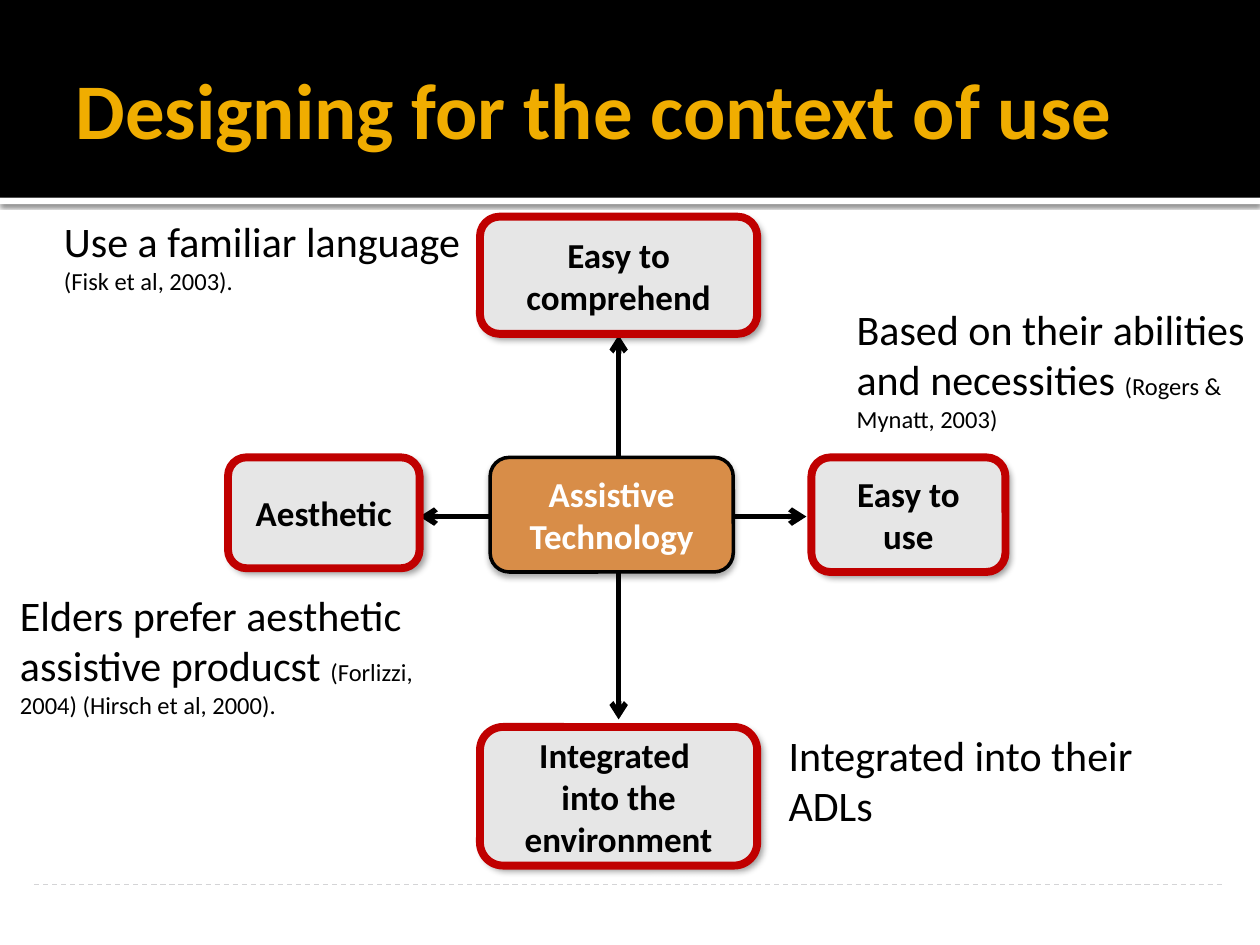
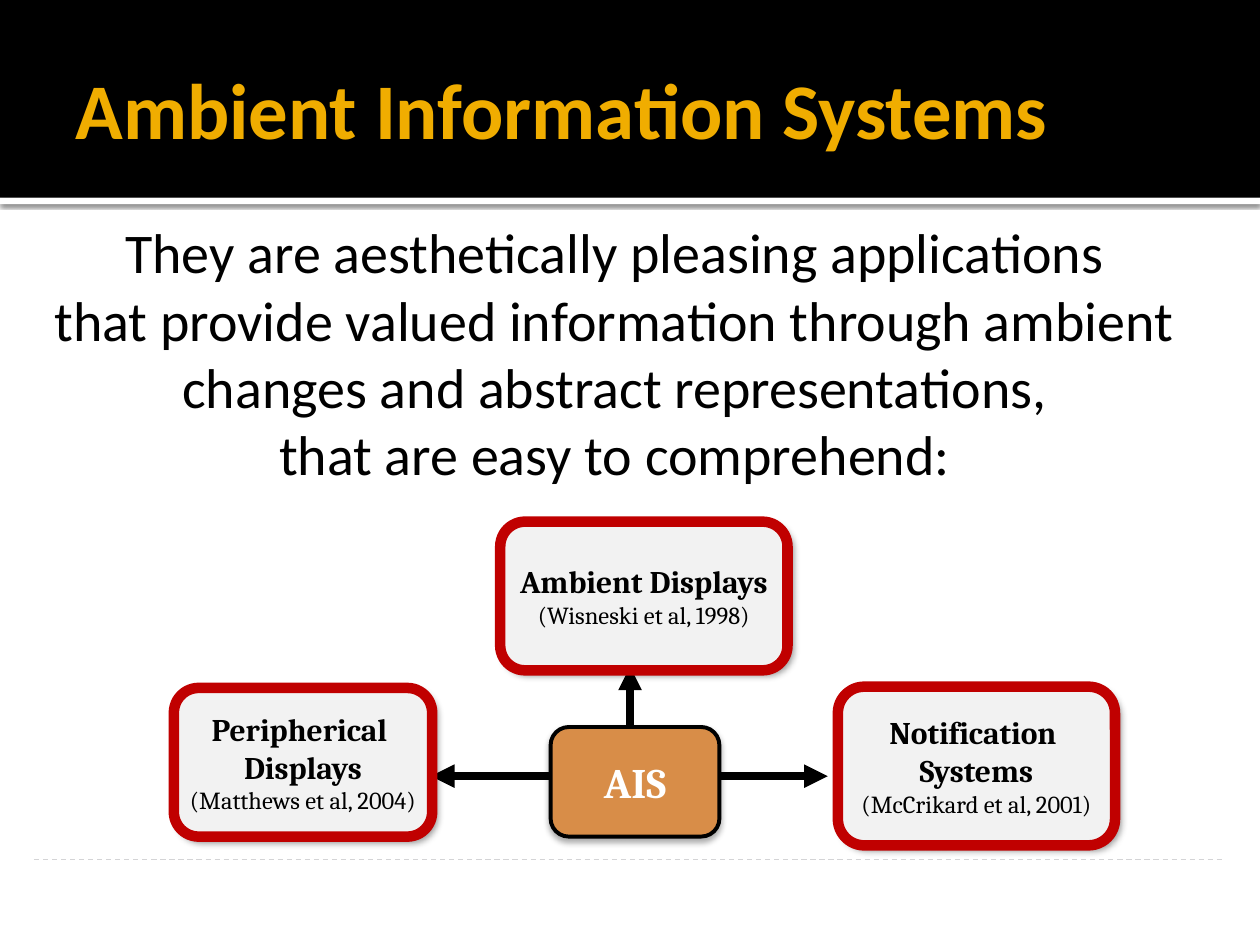
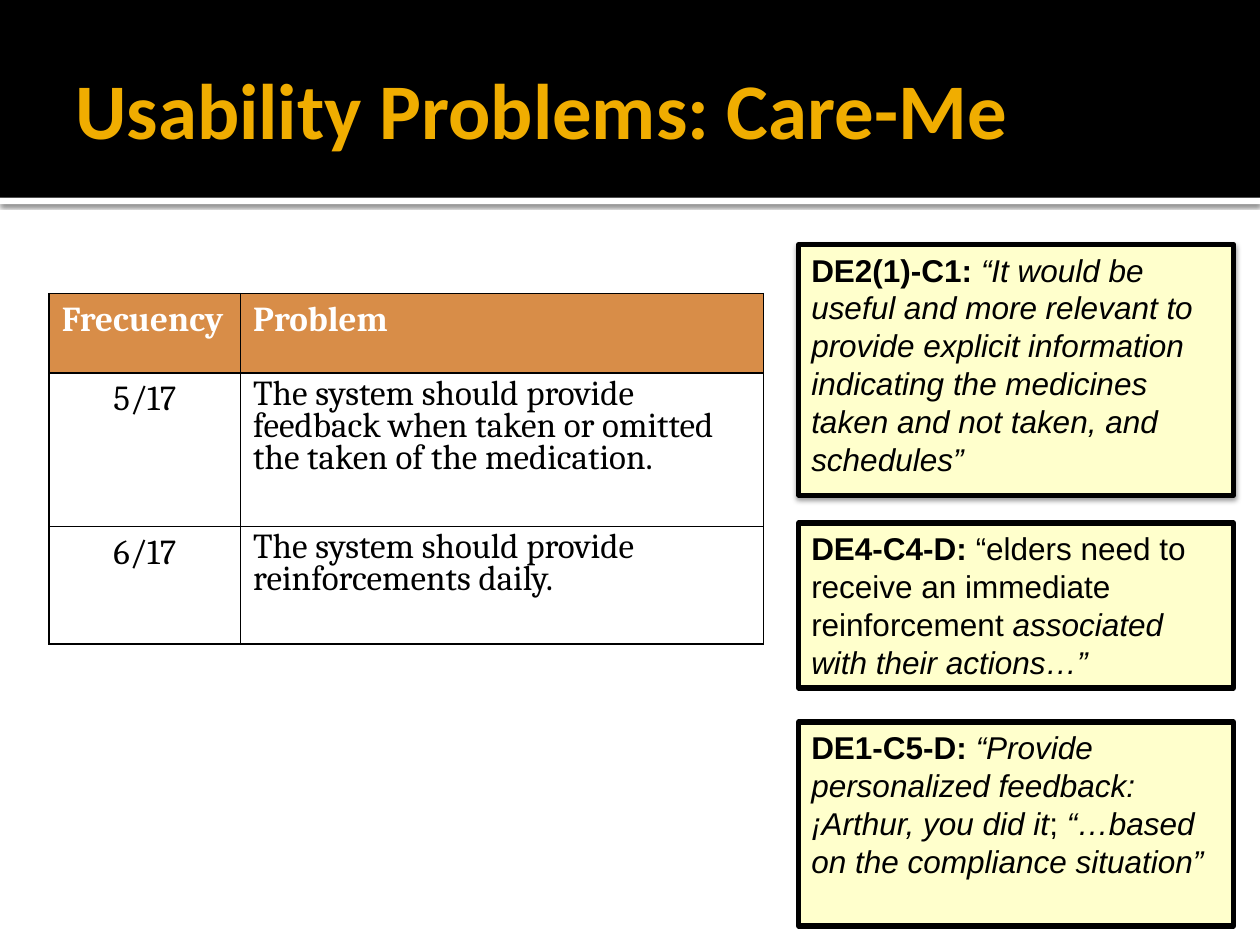
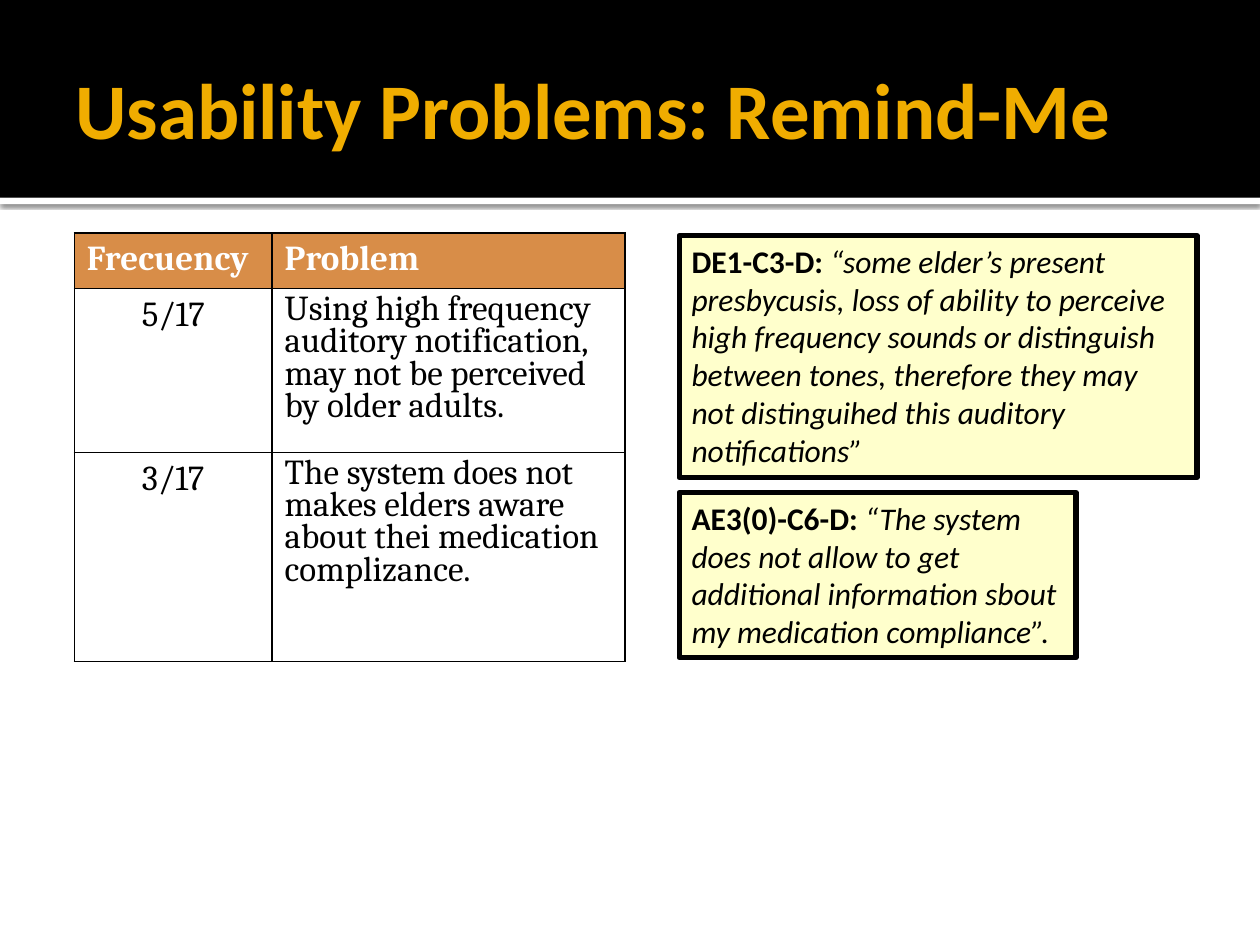
from lxml import etree
from pptx import Presentation
from pptx import util as u
from pptx.dml.color import RGBColor
from pptx.enum import dml, shapes, text
from pptx.oxml import ns


class Theme:
    black, white, gold = "000000", "FFFFFF", "F0AD00"
    red, orange, cream, rule = "C00000", "D88D48", "FFFFCC", "D4D4D6"
    sans, serif, plain = "Calibri", "Cambria", "Arial"
    title, lead, body, label, note, cite = 45, 32, 24, 20, 18, 14
    drop = (40, 4, 3, 45)
    soft = (32, 3.5, 2.2, 90)
    band = (60, 2.5, 0.8, 90)
    lift = (38, 3.1, 1.6, 90)


CITE = dict(size=Theme.cite, bold=False)
BOLD = dict(bold=True)
ITAL = dict(italic=True)
ROMAN = {}

USE = dict(
    title="Designing for the context of use",
    rule=7.02,
    arrows=[
        ((4.91, 4.26), (4.91, 5.71)),
        ((5.54, 4.1), (6.4, 4.1)),
        ((4.37, 4.1), (3.33, 4.1)),
        ((4.91, 3.83), (4.91, 2.66)),
    ],
    arrow=(3, "arrow"),
    texts=[
        ((0.06, 4.63, 3.39, 1.14), [("Elders prefer aesthetic assistive producst ", ROMAN),
                                    ("(Forlizzi, 2004) (Hirsch et al, 2000).", CITE)]),
        ((6.7, 2.36, 3.39, 1.5), [("Based on their abilities and necessities ", ROMAN),
                                  ("(Rogers & Mynatt, 2003)", CITE)]),
        ((0.41, 1.66, 3.47, 1.09), [("Use a familiar language ", ROMAN),
                                    ("(Fisk et al, 2003).", CITE)]),
        ((6.16, 5.74, 3.15, 1.26), [("Integrated into their ADLs", ROMAN)]),
    ],
    cards=[
        ((1.81, 3.63, 1.52, 0.88), ["Aesthetic"]),
        ((6.44, 3.63, 1.54, 0.91), ["Easy to use"]),
        ((3.81, 1.72, 2.2, 0.93), ["Easy to comprehend"]),
        ((3.81, 5.77, 2.2, 1.1), ["Integrated ", "into the environment"]),
    ],
    hub=((3.89, 3.63, 1.93, 0.91), "Assistive Technology", Theme.label),
    look=dict(fill="E6E6E6", edge=2, frame=4.5, font=Theme.sans, size=Theme.label, wrap=True),
)

AMBIENT = dict(
    title="Ambient Information Systems",
    rule=6.82,
    arrows=[
        ((4.53, 6.16), (3.42, 6.16)),
        ((5.23, 6.16), (6.57, 6.16)),
        ((5, 6.24), (5, 5.29)),
    ],
    arrow=(4.5, "triangle"),
    texts=[],
    cards=[
        ((3.97, 4.14, 2.28, 1.18), ["Ambient Displays", ("(Wisneski et al, 1998)", CITE)]),
        ((6.65, 5.45, 2.2, 1.26), ["Notification ", "Systems", ("(McCrikard et al, 2001)", CITE)]),
        ((1.38, 5.46, 2.05, 1.18), ["Peripherical ", "Displays", ("(Matthews et al, 2004)", CITE)]),
    ],
    hub=((4.37, 5.77, 1.34, 0.87), "AIS", Theme.body),
    look=dict(fill="F2F2F2", edge=2.25, frame=6, font=Theme.serif, size=Theme.note, wrap=False),
)

LEAD = ((0.28, 1.68, 9.3, 2.26), [
    "They are aesthetically pleasing applications ",
    "that provide valued information through ambient ",
    "changes and abstract representations, ",
    "that are easy to comprehend: ",
])

HEAD = ("Frecuency", "Problem")

CARE = dict(
    title="Usability Problems: Care-Me",
    at=(0.39, 2.33), cols=(1.52, 4.15), rows=(0.63, 1.22, 0.93),
    cells=[
        ("5/17", "The system should provide feedback when taken or omitted the taken of the medication."),
        ("6/17", "The system should provide reinforcements daily."),
    ],
    font=Theme.plain,
    notes=[
        ((6.34, 1.94, 3.45, 1.99), Theme.lift, [
            ("DE2(1)-C1: ", BOLD),
            ("“It would be useful and more relevant to provide explicit information "
             "indicating the medicines taken and not taken, and schedules”", ITAL)]),
        ((6.34, 4.15, 3.45, 1.31), None, [
            ("DE4-C4-D: ", BOLD),
            ("“elders need to receive an immediate reinforcement", ROMAN),
            (" associated with their actions…”", ITAL)]),
        ((6.34, 5.73, 3.45, 1.62), None, [
            ("DE1-C5-D: ", BOLD),
            ("“Provide personalized feedback: ¡Arthur, you did it", ITAL),
            ("; ", ROMAN),
            ("“…based on the compliance situation”", ITAL)]),
    ],
)

REMIND = dict(
    title="Usability Problems: Remind-Me",
    at=(0.59, 1.85), cols=(1.57, 2.8), rows=(0.44, 1.3, 1.66),
    cells=[
        ("5/17", "Using high frequency auditory notification, may not be perceived by older adults."),
        ("3/17", "The system does not makes elders aware about thei medication complizance."),
    ],
    font=Theme.sans,
    notes=[
        ((5.39, 1.87, 4.11, 1.92), None, [
            ("DE1-C3-D: ", BOLD),
            ("“some elder’s present presbycusis, loss of ability to perceive high frequency "
             "sounds or distinguish between tones, therefore they may not distinguihed "
             "this auditory notifications”", ITAL)]),
        ((5.39, 3.91, 3.15, 1.31), None, [
            ("AE3(0)-C6-D: ", BOLD),
            ("“The system does not allow to get additional information sbout "
             "my medication compliance”.", ITAL)]),
    ],
)


def inch(box):
    return [u.Inches(n) for n in box]


def sub(node, tag, **attrs):
    return etree.SubElement(node, ns.qn(tag), {k: str(v) for k, v in attrs.items()})


def style(font, size=None, name=None, color=None, bold=None, italic=None):
    if size:
        font.size = u.Pt(size)
    if name:
        font.name = name
    if color:
        font.color.rgb = RGBColor.from_string(color)
    if bold is not None:
        font.bold = bold
    if italic is not None:
        font.italic = italic


def write(frame, paras, align=text.PP_ALIGN.LEFT, **base):
    for i, runs in enumerate(paras):
        para = frame.add_paragraph() if i else frame.paragraphs[0]
        para.alignment = align
        style(para.font, **base)
        if isinstance(runs, str):
            runs = [(runs, ROMAN)]
        elif isinstance(runs, tuple):
            runs = [runs]
        for words, extra in runs:
            run = para.add_run()
            run.text = words
            style(run.font, **extra)


def stroke(line, color, width):
    line.color.rgb = RGBColor.from_string(color)
    line.width = u.Pt(width)


def shade(shape, look):
    shape.shadow.inherit = False
    if look:
        alpha, blur, dist, angle = look
        fx = shape.element.spPr.find(ns.qn("a:effectLst"))
        cast = sub(fx, "a:outerShdw", blurRad=u.Pt(blur), dist=u.Pt(dist),
                   dir=angle * 60000, algn="ctr", rotWithShape=0)
        tint = sub(cast, "a:srgbClr", val=Theme.black)
        sub(tint, "a:alpha", val=alpha * 1000)


def block(slide, kind, box, fill=None, line=None, shadow=None):
    shape = slide.shapes.add_shape(kind, *inch(box))
    shade(shape, shadow)
    if fill:
        shape.fill.solid()
        shape.fill.fore_color.rgb = RGBColor.from_string(fill)
    else:
        shape.fill.background()
    if line:
        stroke(shape.line, *line)
    else:
        shape.line.fill.background()
    return shape


def rect(slide, box, **look):
    return block(slide, shapes.MSO_SHAPE.RECTANGLE, box, **look)


def round_box(slide, box, **look):
    return block(slide, shapes.MSO_SHAPE.ROUNDED_RECTANGLE, box, **look)


def link(slide, start, end, color, width, tip=None):
    wire = slide.shapes.add_connector(shapes.MSO_CONNECTOR.STRAIGHT, *inch(start + end))
    stroke(wire.line, color, width)
    sub(wire.element.spPr, "a:effectLst")
    if tip:
        sub(wire.line._get_or_add_ln(), "a:tailEnd", type=tip)
    return wire


def text_box(slide, box, paras, wrap=True, **base):
    frame = slide.shapes.add_textbox(*inch(box)).text_frame
    frame.word_wrap = wrap
    write(frame, paras, name=Theme.sans, color=Theme.black, **base)


def label(shape, paras, wrap, **base):
    frame = shape.text_frame
    frame.word_wrap = wrap
    frame.vertical_anchor = text.MSO_ANCHOR.MIDDLE
    write(frame, paras, text.PP_ALIGN.CENTER, bold=True, **base)


def add_bands(slide):
    tree = slide.slide_layout.shapes.element
    bands = [
        rect(slide, (0, 1.57, 10, 0.05), fill=Theme.white, shadow=Theme.band),
        rect(slide, (0, 0, 10, 1.57), fill=Theme.black),
    ]
    for i, band in enumerate(bands):
        tree.insert(2 + i, band.element)


def add_slide(deck, title):
    slide = deck.slides.add_slide(deck.slide_layouts[5])
    if len(deck.slides) == 1:
        add_bands(slide)
    head = slide.shapes.title
    head.left, head.top, head.width, head.height = inch((0.5, 0.17, 9, 1.37))
    frame = head.text_frame
    frame.margin_right = u.Inches(0.05)
    frame.vertical_anchor = text.MSO_ANCHOR.MIDDLE
    write(frame, [title], size=Theme.title, name=Theme.sans, color=Theme.gold, bold=True)
    return slide


def draw_map(deck, plan):
    slide = add_slide(deck, plan["title"])
    look = plan["look"]
    for start, end in plan["arrows"]:
        link(slide, start, end, Theme.black, *plan["arrow"])
    y = plan["rule"]
    wire = link(slide, (0.27, y), (9.72, y), Theme.rule, 0.75)
    wire.line.dash_style = dml.MSO_LINE.DASH
    for box, runs in plan["texts"]:
        text_box(slide, box, [runs], size=Theme.body)
    edge = (Theme.black, look["edge"])
    for box, paras in plan["cards"]:
        card = round_box(slide, box, fill=look["fill"], line=edge, shadow=Theme.drop)
        label(card, paras, look["wrap"], size=look["size"], name=look["font"], color=Theme.black)
    for box, _ in plan["cards"]:
        round_box(slide, box, line=(Theme.red, look["frame"]))
    box, words, size = plan["hub"]
    hub = round_box(slide, box, fill=Theme.orange, line=edge, shadow=Theme.soft)
    label(hub, [words], look["wrap"], size=size, name=look["font"], color=Theme.white)
    return slide


def fill_cell(cell, words, head, first):
    props = cell._tc.get_or_add_tcPr()
    for side in "LRTB":
        line = sub(props, f"a:ln{side}", w=u.Pt(1))
        sub(sub(line, "a:solidFill"), "a:srgbClr", val=Theme.black)
    cell.fill.solid()
    cell.fill.fore_color.rgb = RGBColor.from_string(Theme.orange if head else Theme.white)
    align = text.PP_ALIGN.CENTER if first and not head else text.PP_ALIGN.LEFT
    write(cell.text_frame, [words], align, size=Theme.label, name=Theme.serif,
          color=Theme.white if head else Theme.black, bold=head)
    if not head and not first:
        cell.text_frame.paragraphs[0].line_spacing = 0.8


def draw_issues(deck, plan):
    slide = add_slide(deck, plan["title"])
    cols, rows = plan["cols"], plan["rows"]
    box = plan["at"] + (sum(cols), sum(rows))
    table = slide.shapes.add_table(len(rows), len(cols), *inch(box)).table
    table.horz_banding = False
    for col, width in zip(table.columns, cols):
        col.width = u.Inches(width)
    for r, line in enumerate([HEAD] + plan["cells"]):
        table.rows[r].height = u.Inches(rows[r])
        for c, words in enumerate(line):
            fill_cell(table.cell(r, c), words, r == 0, c == 0)
    for box, shadow, runs in plan["notes"]:
        note = rect(slide, box, fill=Theme.cream, line=(Theme.black, 3), shadow=shadow)
        note.text_frame.word_wrap = True
        note.text_frame.vertical_anchor = text.MSO_ANCHOR.TOP
        write(note.text_frame, [runs], size=Theme.note, name=plan["font"], color=Theme.black)


def main():
    deck = Presentation()
    deck.slide_width, deck.slide_height = inch((10, 7.5))
    draw_map(deck, USE)
    slide = draw_map(deck, AMBIENT)
    box, lines = LEAD
    text_box(slide, box, lines, wrap=False, align=text.PP_ALIGN.CENTER, size=Theme.lead)
    draw_issues(deck, CARE)
    draw_issues(deck, REMIND)
    deck.save("out.pptx")


if __name__ == "__main__":
    main()
